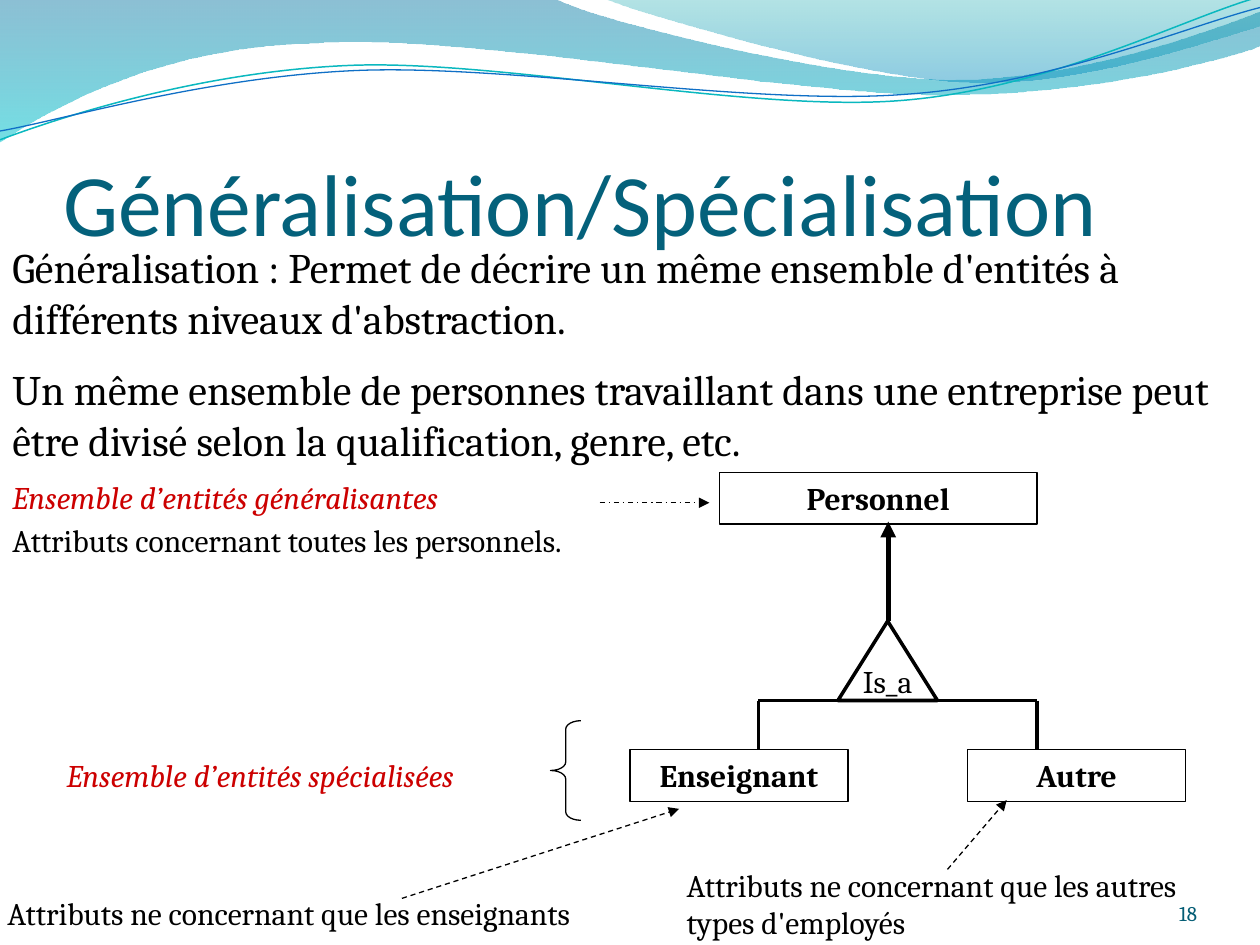
from dataclasses import dataclass

from lxml.etree import SubElement
from pptx import Presentation
from pptx.dml.color import RGBColor as Rgb
from pptx.enum.dml import MSO_LINE as Dash
from pptx.enum.shapes import MSO_CONNECTOR as Connector, MSO_SHAPE as Preset
from pptx.enum.text import MSO_ANCHOR as Anchor, PP_ALIGN as Align
from pptx.oxml.ns import qn
from pptx.util import Inches, Pt

Point = tuple[float, float]
Box = tuple[float, float, float, float]


@dataclass(frozen=True)
class Theme:
    heading_font: str = "Calibri"
    body_font: str = "Cambria"
    title_color: str = "04617B"
    number_color: str = "045D75"
    ink: str = "000000"
    accent: str = "CC0000"
    title_size: int = 50
    body_size: int = 24
    label_size: int = 18
    number_size: int = 12


THEME = Theme()


@dataclass(frozen=True)
class Span:
    text: str
    size: int = THEME.label_size
    color: str = THEME.ink
    bold: bool = False
    italic: bool = False
    font: str = THEME.body_font


@dataclass(frozen=True)
class TextBlock:
    box: Box
    spans: tuple[Span, ...]
    gap: float = 0
    line_spacing: float = 1
    align: Align = Align.LEFT
    anchor: Anchor = Anchor.TOP
    margins: Box = (0.1, 0.05, 0.1, 0.05)


@dataclass(frozen=True)
class Link:
    start: Point
    end: Point
    width: float = 0.75
    dash: Dash | None = None
    arrow: bool = False


@dataclass(frozen=True)
class Stop:
    color: str
    opacity: int


@dataclass(frozen=True)
class Wave:
    """Start point, then segments of one point (straight) or three (cubic curve)."""
    start: Point
    segments: tuple[tuple[Point, ...], ...]
    stops: tuple[Stop, ...] = ()
    line_color: str = ""
    line_width: float = 0


WAVES = (
    Wave((0, 0), (((4.4, -0.01),),
                  ((4.76, 0.17), (6.64, 0.63), (7.58, 0.63)),
                  ((8.53, 0.63), (9.58, 0.26), (10, 0.09)),
                  ((10.01, 0.36),),
                  ((9.83, 0.44), (8.7, 0.76), (7.46, 0.75)),
                  ((6.22, 0.75), (3.82, 0.28), (2.57, 0.34)),
                  ((1.29, 0.36), (0.46, 0.83), (-0.01, 1.13)),
                  ((0, 0),)),
         stops=(Stop("0074A1", 45), Stop("00C6CF", 55))),
    Wave((4.79, -0.01), (((5.09, 0.11), (6.82, 0.62), (7.69, 0.65)),
                         ((8.56, 0.69), (9.61, 0.32), (10, 0.21)),
                         ((10, 0),),
                         ((4.79, -0.01),)),
         stops=(Stop("00A1A9", 30), Stop("008BBF", 45))),
    Wave((0, 1.11), (((0.48, 0.93), (1.58, 0.57), (2.77, 0.52)),
                     ((3.95, 0.47), (5.93, 0.89), (7.13, 0.8)),
                     ((8.33, 0.71), (9.38, 0.15), (9.98, -0.02))),
         line_color="0AB8BF", line_width=0.85),
    Wave((0, 1.04), (((0.47, 0.96), (1.64, 0.61), (2.83, 0.56)),
                     ((4.03, 0.51), (5.97, 0.84), (7.17, 0.75)),
                     ((8.36, 0.67), (9.41, 0.21), (10, 0.06))),
         line_color="0F6FC6", line_width=0.75),
)

TITLE = TextBlock(
    (0.5, 0.77, 9, 1.25),
    (Span("Généralisation/Spécialisation", THEME.title_size, THEME.title_color,
          font=THEME.heading_font),),
    anchor=Anchor.BOTTOM, margins=(0, 0.05, 0, 0))

TEXTS = (
    TextBlock((0, 1.31, 10, 2.52), (
        Span("Généralisation : Permet de décrire un même ensemble d'entités à "
             "différents niveaux d'abstraction.", THEME.body_size),
        Span("Un même ensemble de personnes travaillant dans une entreprise peut "
             "être divisé selon la qualification, genre, etc.", THEME.body_size),
    ), gap=12, margins=(0.1, 0.61, 0.1, 0.05)),
    TextBlock((0, 3.83, 4.92, 0.67), (
        Span("Ensemble d’entités généralisantes", color=THEME.accent, italic=True),
        Span("Attributs concernant toutes les personnels."),
    ), gap=9, line_spacing=0.7),
    TextBlock((-0.04, 7.05, 5.04, 0.4),
              (Span("Attributs ne concernant que les enseignants"),)),
    TextBlock((5.35, 6.82, 4.65, 0.71),
              (Span("Attributs ne concernant que les autres types d'employés"),)),
    TextBlock((0.43, 5.95, 4.1, 0.4),
              (Span("Ensemble d’entités spécialisées", color=THEME.accent, italic=True),)),
    TextBlock((8.67, 6.95, 0.83, 0.4),
              (Span("18", THEME.number_size, THEME.number_color),),
              align=Align.RIGHT, anchor=Anchor.BOTTOM, margins=(0, 0, 0, 0)),
)

ENTITIES = tuple(
    TextBlock(box, (Span(name, bold=True),), align=Align.CENTER)
    for name, box in (("Personnel", (5.71, 3.75, 2.52, 0.41)),
                      ("Enseignant", (5, 5.95, 1.73, 0.41)),
                      ("Autre", (7.68, 5.95, 1.73, 0.41))))
IS_A = TextBlock((6.65, 4.93, 0.79, 0.63), (Span("Is_a"),),
                 align=Align.CENTER, anchor=Anchor.MIDDLE)

LEFT_X, RIGHT_X, BRANCH_Y, CHILD_Y = 6.02, 8.23, 5.56, 5.95
LINKS = (
    Link((4.76, 3.99), (5.63, 3.99), dash=Dash.DASH_DOT, arrow=True),
    Link((3.19, 7.13), (5.39, 6.42), dash=Dash.DASH, arrow=True),
    Link((7.52, 6.9), (7.99, 6.35), dash=Dash.DASH, arrow=True),
    Link((7.05, 4.93), (7.05, 4.14), width=3, arrow=True),
    Link((LEFT_X, BRANCH_Y), (RIGHT_X, BRANCH_Y), width=1.75),
    *(Link((x, BRANCH_Y), (x, CHILD_Y), width=2) for x in (LEFT_X, RIGHT_X)),
)


def bend(shape, wave: Wave) -> None:
    """Merge the three straight steps of each curved segment into one cubic curve."""
    steps = iter(list(shape.element.spPr.iter(qn("a:lnTo"))))
    for segment in wave.segments:
        first, *others = [next(steps) for _ in segment]
        if others:
            first.tag = qn("a:cubicBezTo")
        for step in others:
            first.append(step[0])
            step.getparent().remove(step)


def draw_wave(slide, wave: Wave) -> None:
    points = [wave.start, *(point for segment in wave.segments for point in segment)]
    first, *rest = [(Inches(x), Inches(y)) for x, y in points]
    builder = slide.shapes.build_freeform(*first)
    builder.add_line_segments(rest, close=bool(wave.stops))
    shape = builder.convert_to_shape()
    bend(shape, wave)
    shape.shadow.inherit = False
    if not wave.stops:
        shape.fill.background()
        shape.line.color.rgb = Rgb.from_string(wave.line_color)
        shape.line.width = Pt(wave.line_width)
        return
    shape.line.fill.background()
    shape.fill.gradient()
    shape.fill.gradient_angle = 270
    for target, stop in zip(shape.fill.gradient_stops, wave.stops):
        target.color.rgb = Rgb.from_string(stop.color)
    colors = shape.element.spPr.iter(qn("a:srgbClr"))
    for color, stop in zip(colors, wave.stops):
        SubElement(color, qn("a:alpha"), val=str(stop.opacity * 1000))


def place(shape, box: Box) -> None:
    shape.left, shape.top, shape.width, shape.height = map(Inches, box)


def write(shape, block: TextBlock, wrap: bool = True) -> None:
    frame = shape.text_frame
    frame.word_wrap = wrap
    frame.vertical_anchor = block.anchor
    (frame.margin_left, frame.margin_top,
     frame.margin_right, frame.margin_bottom) = map(Inches, block.margins)
    for index, span in enumerate(block.spans):
        para = frame.add_paragraph() if index else frame.paragraphs[0]
        para.alignment = block.align
        para.line_spacing = block.line_spacing
        para.space_before = Pt(block.gap if index else 0)
        run = para.add_run()
        run.text = span.text
        font = run.font
        font.name, font.size = span.font, Pt(span.size)
        font.bold, font.italic = span.bold, span.italic
        font.color.rgb = Rgb.from_string(span.color)


def draw_outline(slide, preset: Preset, box: Box, width: float = 0.75):
    shape = slide.shapes.add_shape(preset, *map(Inches, box))
    shape.shadow.inherit = False
    shape.fill.background()
    shape.line.color.rgb = Rgb.from_string(THEME.ink)
    shape.line.width = Pt(width)
    return shape


def draw_link(slide, link: Link) -> None:
    connector = slide.shapes.add_connector(Connector.STRAIGHT,
                                           *map(Inches, (*link.start, *link.end)))
    line = connector.line
    line.color.rgb = Rgb.from_string(THEME.ink)
    line.width = Pt(link.width)
    if link.dash:
        line.dash_style = link.dash
    properties = connector.element.spPr
    if link.arrow:
        SubElement(properties.find(qn("a:ln")), qn("a:tailEnd"), type="triangle")
    SubElement(properties, qn("a:effectLst"))


def main() -> None:
    deck = Presentation()
    deck.slide_width, deck.slide_height = Inches(10), Inches(7.5)
    slide = deck.slides.add_slide(deck.slide_layouts[5])
    for wave in WAVES:
        draw_wave(slide, wave)
    place(slide.shapes.title, TITLE.box)
    write(slide.shapes.title, TITLE)
    for block in TEXTS:
        write(slide.shapes.add_textbox(*map(Inches, block.box)), block)
    for entity in ENTITIES:
        write(draw_outline(slide, Preset.RECTANGLE, entity.box), entity)
    triangle = draw_outline(slide, Preset.FLOWCHART_EXTRACT, IS_A.box, width=2)
    write(triangle, IS_A, wrap=False)
    brace = draw_outline(slide, Preset.LEFT_BRACE, (4.37, 5.72, 0.24, 0.79))
    brace.adjustments[0] = 0.28
    for link in LINKS:
        draw_link(slide, link)
    deck.save("out.pptx")


if __name__ == "__main__":
    main()
